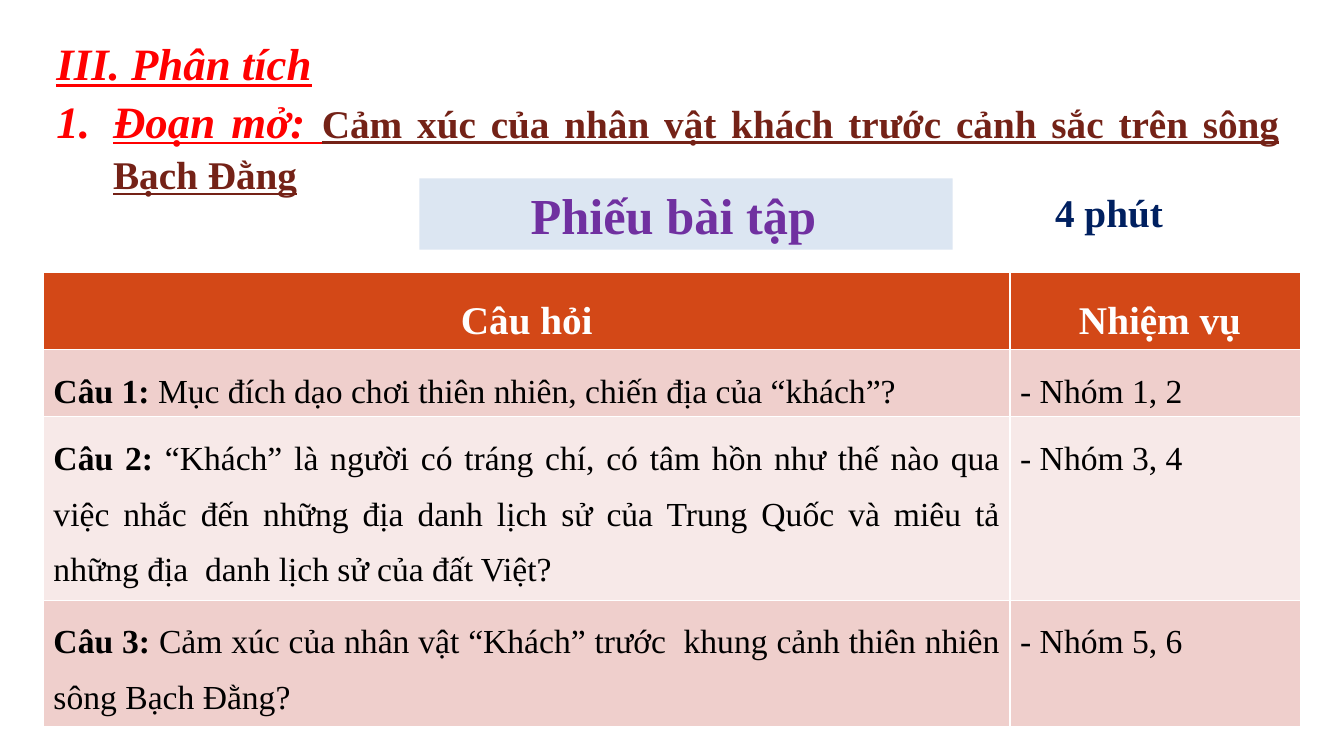
from lxml import etree
from pptx import Presentation, util as u
from pptx.dml.color import RGBColor
from pptx.enum import shapes, text
from pptx.oxml.ns import qn

Pt = u.Pt
LEFT, CENTER, JUSTIFY = text.PP_ALIGN.LEFT, text.PP_ALIGN.CENTER, text.PP_ALIGN.JUSTIFY
FONT = "Times New Roman"
ROW_HEIGHTS = (55, 48, 131, 90)
COLUMN_WIDTHS = (690.5, 207.4)
QUESTIONS = (
    ("Câu 1: ", "Mục đích dạo chơi thiên nhiên, chiến địa của “khách”?", "- Nhóm 1, 2"),
    ("Câu 2: ", "“Khách” là người có tráng chí, có tâm hồn như thế nào qua việc nhắc đến "
     "những địa danh lịch sử của Trung Quốc và miêu tả những địa  danh lịch sử của đất Việt?",
     "- Nhóm 3, 4"),
    ("Câu 3: ", "Cảm xúc của nhân vật “Khách” trước  khung cảnh thiên nhiên sông Bạch Đằng?",
     "- Nhóm 5, 6"),
)


def colour(hex_value):
    return RGBColor.from_string(hex_value)


def paint(item, hex_value):
    item.fill.solid()
    item.fill.fore_color.rgb = colour(hex_value)


def write(paragraph, words, size=24, color="000000", bold=False, italic=False,
          underline=False, align=LEFT, spacing=1.0):
    paragraph.alignment = align
    paragraph.line_spacing = spacing
    run = paragraph.add_run()
    run.text = words
    font = run.font
    font.name, font.size, font.color.rgb = FONT, Pt(size), colour(color)
    font.bold, font.italic, font.underline = bold, italic, underline


def number(paragraph, indent):
    properties = paragraph._p.get_or_add_pPr()
    properties.set("marL", str(Pt(indent)))
    properties.set("indent", str(Pt(-indent)))
    etree.SubElement(properties, qn("a:buFont"), typeface="+mj-lt")
    etree.SubElement(properties, qn("a:buAutoNum"), type="arabicPeriod")


def add_heading(slide):
    heading = slide.shapes.title
    heading.left, heading.top, heading.width, heading.height = Pt(33.1), Pt(6.5), Pt(887.8), Pt(138.2)
    frame = heading.text_frame
    frame.auto_size = text.MSO_AUTO_SIZE.NONE
    frame.vertical_anchor = text.MSO_ANCHOR.BOTTOM
    section, part = frame.paragraphs[0], frame.add_paragraph()
    look = dict(bold=True, underline=True, align=JUSTIFY, spacing=1.07)
    write(section, "III. Phân tích", size=32, color="FF0000", italic=True, **look)
    write(part, "Đoạn mở: ", size=32, color="FF0000", italic=True, **look)
    write(part, "Cảm xúc của nhân vật khách trước cảnh sắc trên sông Bạch Đằng",
          size=28, color="742217", **look)
    number(part, 40.5)


def add_banner(slide):
    banner = slide.shapes.add_shape(shapes.MSO_SHAPE.RECTANGLE, Pt(299.5), Pt(127.4), Pt(381), Pt(51))
    banner.shadow.inherit = False
    banner.line.fill.background()
    paint(banner, "DCE6F2")
    frame = banner.text_frame
    frame.word_wrap = True
    frame.margin_right = Pt(25)
    frame.vertical_anchor = text.MSO_ANCHOR.MIDDLE
    write(frame.paragraphs[0], "Phiếu bài tập", size=36, color="7030A0", bold=True, align=CENTER)


def add_time_limit(slide):
    time_limit = slide.shapes.add_textbox(Pt(746.6), Pt(131), Pt(99.4), Pt(41))
    time_limit.text_frame.word_wrap = False
    write(time_limit.text_frame.paragraphs[0], "4 phút", size=28, color="002060", bold=True)


def add_questions(slide):
    worksheet = slide.shapes.add_table(4, 2, Pt(31), Pt(194.8), Pt(sum(COLUMN_WIDTHS)),
                                       Pt(sum(ROW_HEIGHTS))).table
    for column, width in zip(worksheet.columns, COLUMN_WIDTHS):
        column.width = Pt(width)
    for row, height in zip(worksheet.rows, ROW_HEIGHTS):
        row.height = Pt(height)
    for index, label in enumerate(("Câu hỏi", "Nhiệm vụ")):
        header = worksheet.cell(0, index)
        paint(header, "D34817")
        write(header.text_frame.paragraphs[0], label, size=28, color="FFFFFF", bold=True,
              align=CENTER, spacing=1.5)
    worksheet.cell(0, 1).margin_left = Pt(14)
    for index, (label, question, group) in enumerate(QUESTIONS, 1):
        task, team = worksheet.cell(index, 0), worksheet.cell(index, 1)
        for cell in (task, team):
            paint(cell, "EFCFCC" if index % 2 else "F7E9E8")
        look = dict(align=JUSTIFY, spacing=1.5)
        write(task.text_frame.paragraphs[0], label, bold=True, **look)
        write(task.text_frame.paragraphs[0], question, **look)
        write(team.text_frame.paragraphs[0], group, **look)


def main():
    deck = Presentation()
    deck.slide_width, deck.slide_height = Pt(960), Pt(540)
    slide = deck.slides.add_slide(deck.slide_layouts[5])
    add_heading(slide)
    add_banner(slide)
    add_questions(slide)
    add_time_limit(slide)
    deck.save("out.pptx")


if __name__ == "__main__":
    main()
